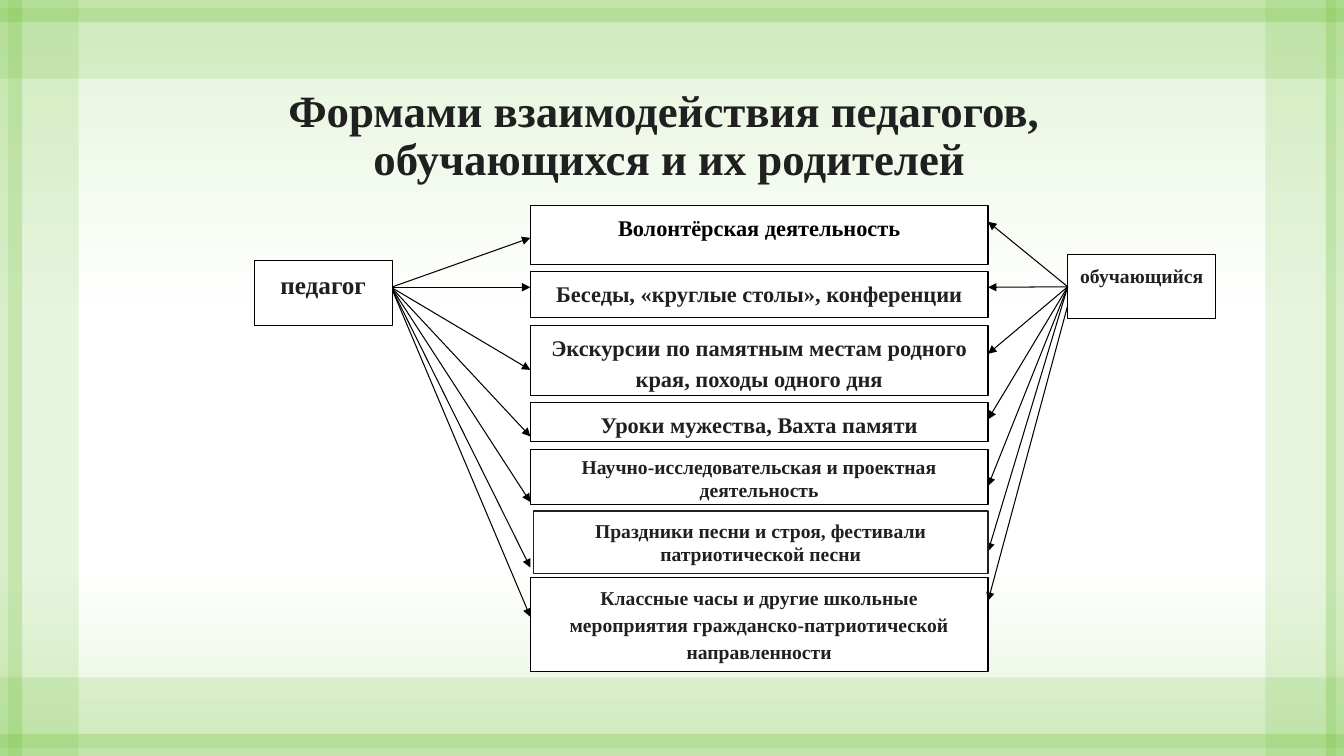
from lxml.etree import SubElement
from pptx import Presentation
from pptx.dml.color import RGBColor
from pptx.enum.shapes import MSO_CONNECTOR as Connector, MSO_SHAPE as Shape
from pptx.enum.text import MSO_ANCHOR as Anchor, PP_ALIGN as Align
from pptx.oxml.ns import qn
from pptx.util import Inches, Pt

WIDTH, HEIGHT = 13.33, 7.5
FONT = "Times New Roman"
GREEN, WHITE, BLACK, INK = "72C23C", "FFFFFF", "000000", "202020"
LEFT, RIGHT = 5.26, 9.8
BACKGROUND_STOPS = [(0, "E3F3D8", 85), (42, WHITE, 40), (75, WHITE, 40), (100, "E3F3D8", 86)]
FORMS = [
    ("Волонтёрская деятельность", 2.04, 0.58, 16, 1.15, BLACK),
    ("Беседы, «круглые столы», конференции", 2.69, 0.46, 16, 1.15, INK),
    ("Экскурсии по памятным местам родного края, походы одного дня", 3.23, 0.69, 16, 1.15, INK),
    ("Уроки мужества, Вахта памяти", 3.99, 0.39, 16, 1.15, INK),
    ("Научно-исследовательская и проектная деятельность", 4.46, 0.55, 14, 1, INK),
    ("Классные часы и другие школьные мероприятия гражданско-патриотической направленности",
     5.73, 0.93, 14, 1.15, INK),
]
TEACHER_ENDS = [2.36, 2.85, 3.67, 4.33, 4.98, 5.63, 6.12]
STUDENT_ENDS = [2.2, 2.85, 3.51, 4.16, 4.82, 5.47]


def color(value):
    """Turn a hex string into a colour."""
    return RGBColor.from_string(value)


def add_alpha(element, percent):
    """Set the opacity of a colour element."""
    SubElement(element, qn("a:alpha"), val=str(percent * 1000))


def paint_background(page):
    """Fill the page with a vertical green and white gradient."""
    fill = page.background.fill
    fill.gradient()
    fill.gradient_angle = 270
    stops = page.element.find(".//" + qn("a:gsLst"))
    for stop in list(stops):
        stops.remove(stop)
    for position, value, percent in BACKGROUND_STOPS:
        stop = SubElement(stops, qn("a:gs"), pos=str(position * 1000))
        add_alpha(SubElement(stop, qn("a:srgbClr"), val=value), percent)


def add_rectangle(page, left, top, width, height, fill):
    """Add a plain rectangle without outline or shadow."""
    box = page.shapes.add_shape(
        Shape.RECTANGLE, Inches(left), Inches(top), Inches(width), Inches(height))
    box.shadow.inherit = False
    box.fill.solid()
    box.fill.fore_color.rgb = color(fill)
    box.line.fill.background()
    return box


def add_band(page, left, top, width, height, percent):
    """Add a translucent green band of the frame."""
    band = add_rectangle(page, left, top, width, height, GREEN)
    add_alpha(band.element.spPr.find(".//" + qn("a:srgbClr")), percent)


def add_frame(page):
    """Add a wide and a narrow band along each edge."""
    for wide, narrow in ((0.08, 0), (6.72, 7.28)):
        add_band(page, 0, wide, WIDTH, 0.7, 17)
        add_band(page, 0, narrow, WIDTH, 0.22, 28)
    for wide, narrow in ((0.08, 0), (12.55, 13.15)):
        add_band(page, wide, 0, 0.7, HEIGHT, 17)
        add_band(page, narrow, 0, 0.22, HEIGHT, 28)


def write(box, text, size, spacing, anchor, ink):
    """Write bold centred text into a shape."""
    frame = box.text_frame
    frame.word_wrap = True
    frame.vertical_anchor = anchor
    frame.text = text
    para = frame.paragraphs[0]
    para.alignment = Align.CENTER
    para.line_spacing = spacing
    for span in para.runs:
        span.font.name = FONT
        span.font.size = Pt(size)
        span.font.bold = True
        span.font.color.rgb = color(ink)


def add_title(page, text):
    """Add the heading of the page."""
    box = page.shapes.add_textbox(Inches(0.75), Inches(0.81), Inches(11.78), Inches(1.08))
    write(box, text, 32, 0.9, Anchor.BOTTOM, INK)


def add_box(page, text, left, top, width, height, size,
            spacing=1.15, ink=INK, anchor=Anchor.TOP, outline=BLACK, weight=0.75):
    """Add a white outlined box with text."""
    box = add_rectangle(page, left, top, width, height, WHITE)
    box.line.color.rgb = color(outline)
    box.line.width = Pt(weight)
    write(box, text, size, spacing, anchor, ink)
    return box


def add_arrow(page, start_x, start_y, end_x, end_y):
    """Add a thin black arrow."""
    arrow = page.shapes.add_connector(
        Connector.STRAIGHT, Inches(start_x), Inches(start_y), Inches(end_x), Inches(end_y))
    arrow.line.color.rgb = color(BLACK)
    arrow.line.width = Pt(0.75)
    SubElement(arrow.line._get_or_add_ln(), qn("a:tailEnd"), type="triangle")
    SubElement(arrow.element.spPr, qn("a:effectLst"))
    return arrow


def main():
    """Build the slide and save it."""
    deck = Presentation()
    deck.slide_width, deck.slide_height = Inches(WIDTH), Inches(HEIGHT)
    page = deck.slides.add_slide(deck.slide_layouts[6])
    paint_background(page)
    add_frame(page)
    add_title(page, "Формами взаимодействия педагогов, \vобучающихся и их родителей")
    student = add_box(page, "обучающийся", 10.59, 2.53, 1.47, 0.63, 14)
    for text, top, height, size, spacing, ink in FORMS:
        add_box(page, text, LEFT, top, RIGHT - LEFT, height, size, spacing, ink)
    for end in TEACHER_ENDS:
        add_arrow(page, 3.88, 2.85, LEFT, end)
    for end in STUDENT_ENDS:
        add_arrow(page, 10.59, 2.85, RIGHT, end).begin_connect(student, 1)
    add_arrow(page, 10.59, 3.03, RIGHT, 5.96)
    add_box(page, "педагог", 2.52, 2.58, 1.37, 0.65, 18)
    add_box(page, "Праздники песни и строя, фестивали патриотической песни",
            5.29, 5.07, 4.51, 0.62, 14, 1, INK, Anchor.MIDDLE, INK, 1)
    deck.save("out.pptx")


if __name__ == "__main__":
    main()
